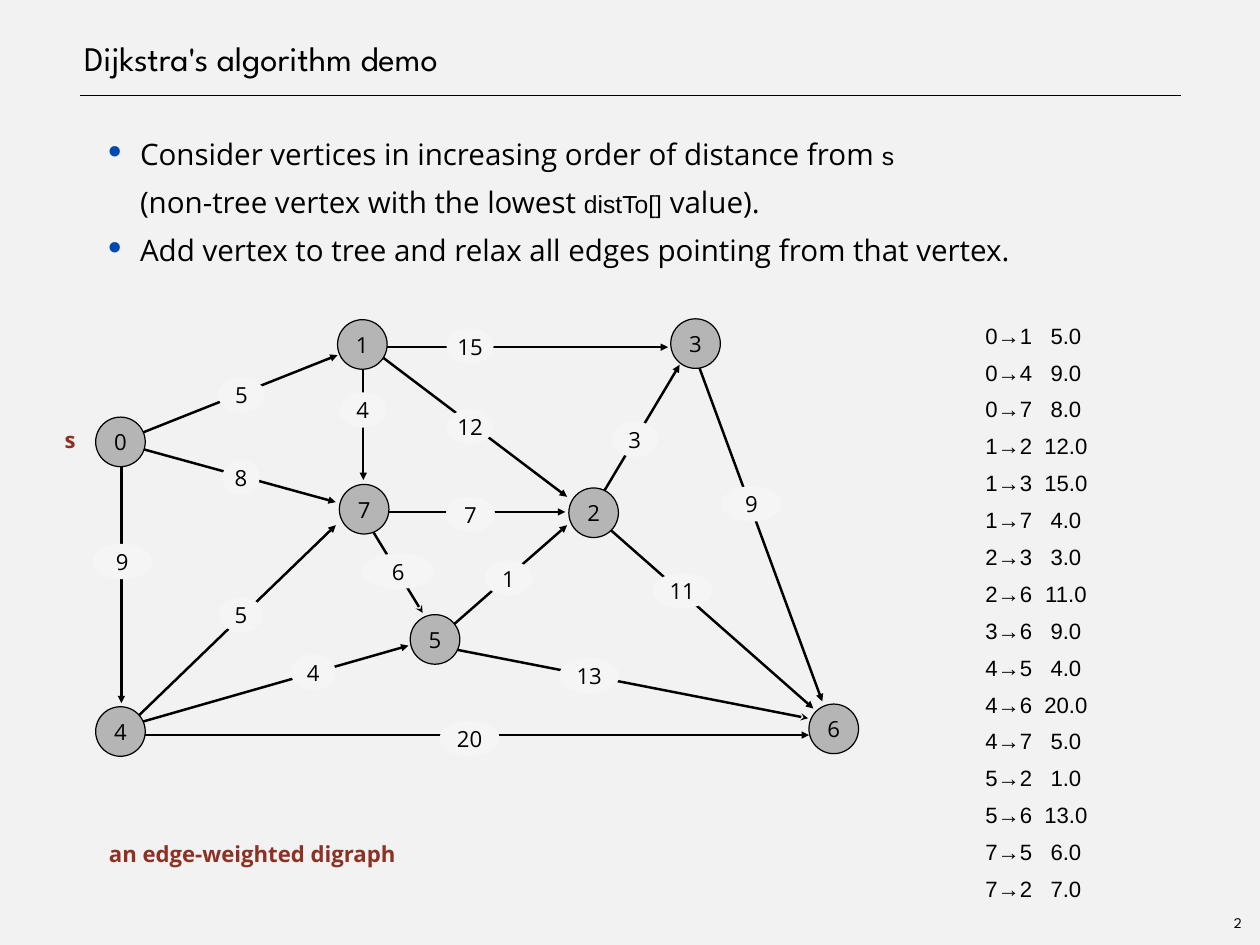
from typing import NamedTuple

from lxml.etree import SubElement
from pptx import Presentation
from pptx.dml.color import RGBColor
from pptx.enum.shapes import MSO_CONNECTOR, MSO_SHAPE
from pptx.enum.text import MSO_ANCHOR, MSO_AUTO_SIZE, PP_ALIGN
from pptx.oxml.ns import qn
from pptx.util import Inches, Pt

COLORS = {
    "page": "F2F2F2",
    "ink": "000000",
    "vertex": "B5B5B5",
    "weight": "F5F5F5",
    "accent": "8D3124",
    "bullet": "0048B4",
}
SANS, MONO, HEADING = "Open Sans", "Arial", "League Spartan"
VERTEX_SIZE = 0.56
WEIGHT_HEIGHT = 0.4


class Vertex(NamedTuple):
    name: str
    left: float
    top: float


class Edge(NamedTuple):
    source: int
    target: int
    weight: int
    start: tuple[float, float]
    end: tuple[float, float]
    label: tuple[float, float, float]  # left, top, width
    head: str = "triangle"


class Span(NamedTuple):
    text: str
    size: int = 24
    font: str = SANS


VERTICES = [
    Vertex("0", 1.08, 4.71),
    Vertex("1", 3.81, 3.61),
    Vertex("2", 6.42, 5.51),
    Vertex("3", 7.57, 3.6),
    Vertex("4", 1.08, 7.98),
    Vertex("5", 4.63, 6.94),
    Vertex("6", 9.13, 7.95),
    Vertex("7", 3.83, 5.47),
]

EDGES = [
    Edge(0, 1, 5, (1.42, 4.96), (3.81, 4.01), (2.46, 4.26, 0.53)),
    Edge(0, 4, 9, (1.37, 5.15), (1.37, 7.94), (1.04, 6.14, 0.68)),
    Edge(0, 7, 8, (1.39, 5.01), (3.79, 5.67), (2.51, 5.19, 0.42)),
    Edge(1, 2, 12, (4.18, 3.93), (6.4, 5.61), (5.04, 4.62, 0.53)),
    Edge(1, 3, 15, (4.08, 3.92), (7.54, 3.92), (5.04, 3.71, 0.53)),
    Edge(1, 7, 4, (4.1, 3.88), (4.1, 5.42), (3.83, 4.43, 0.53)),
    Edge(2, 3, 3, (6.63, 5.86), (7.67, 4.12), (6.9, 4.76, 0.53)),
    Edge(2, 6, 11, (6.83, 5.93), (9.18, 8), (7.36, 6.47, 0.68)),
    Edge(3, 6, 9, (7.83, 3.98), (9.28, 7.92), (8.14, 5.49, 0.68)),
    Edge(4, 5, 4, (1.36, 8.22), (4.61, 7.29), (3.28, 7.39, 0.51)),
    Edge(4, 6, 20, (1.36, 8.3), (9.13, 8.3), (4.96, 8.14, 0.68)),
    Edge(4, 7, 5, (1.41, 8.23), (3.79, 5.93), (2.47, 6.74, 0.5)),
    Edge(5, 2, 1, (4.94, 7.21), (6.4, 5.93), (5.47, 6.33, 0.54)),
    Edge(5, 6, 13, (5.02, 7.31), (9.12, 8.11), (6.31, 7.43, 0.68), "stealth"),
    Edge(7, 5, 6, (4.05, 5.74), (4.77, 6.92), (4.08, 6.25, 0.83), "stealth"),
    Edge(7, 2, 7, (4.06, 5.78), (6.38, 5.78), (5.03, 5.61, 0.56)),
]

STEPS = [
    [
        Span("Consider vertices in increasing order of distance from "),
        Span("s", 20, MONO),
        Span("\n"),
        Span("(non-tree vertex with the lowest "),
        Span("distTo[]", 20, MONO),
        Span(" value)."),
    ],
    [Span("Add vertex to tree and relax all edges pointing from that vertex.")],
]


def rgb(name: str) -> RGBColor:
    return RGBColor.from_string(COLORS[name])


def set_frame(frame, left=0.0, top=0.0, right=0.0, bottom=0.0, anchor=MSO_ANCHOR.TOP) -> None:
    frame.word_wrap = True
    frame.auto_size = MSO_AUTO_SIZE.NONE
    frame.vertical_anchor = anchor
    frame.margin_left, frame.margin_right = Inches(left), Inches(right)
    frame.margin_top, frame.margin_bottom = Inches(top), Inches(bottom)


def add_span(para, text, *, size=18, font=SANS, color="ink", bold=False) -> None:
    if text == "\n":
        para.add_line_break()
        return
    span = para.add_run()
    span.text = text
    span.font.size, span.font.name, span.font.bold = Pt(size), font, bold
    span.font.color.rgb = rgb(color)


def write(frame, lines, *, align=PP_ALIGN.LEFT, spacing=None, center_tab=None, **style) -> None:
    """Write one paragraph per line; center_tab is the inch position of a centred tab stop."""
    for index, line in enumerate(lines):
        para = frame.paragraphs[0] if index == 0 else frame.add_paragraph()
        if center_tab is not None:
            tabs = SubElement(para._p.get_or_add_pPr(), qn("a:tabLst"))
            SubElement(tabs, qn("a:tab"), pos=str(Inches(center_tab)), algn="ctr")
        para.alignment = align
        para.line_spacing = spacing
        add_span(para, line, **style)


def add_text(page, left, top, width, height, lines, *, inset=0.12, anchor=MSO_ANCHOR.TOP, **style) -> None:
    box = page.shapes.add_textbox(Inches(left), Inches(top), Inches(width), Inches(height))
    set_frame(box.text_frame, inset, 0.06, 0.06, 0.06, anchor)
    write(box.text_frame, lines, **style)


def add_line(page, start, end, width, head=None) -> None:
    line = page.shapes.add_connector(
        MSO_CONNECTOR.STRAIGHT, *(Inches(value) for value in (*start, *end))
    )
    line.line.color.rgb = rgb("ink")
    line.line.width = Pt(width)
    if head:
        SubElement(line.line._get_or_add_ln(), qn("a:tailEnd"), type=head)
    SubElement(line._element.spPr, qn("a:effectLst"))


def add_oval(page, text, left, top, width, height, fill, outlined=False) -> None:
    oval = page.shapes.add_shape(
        MSO_SHAPE.OVAL, Inches(left), Inches(top), Inches(width), Inches(height)
    )
    oval.shadow.inherit = False
    oval.fill.solid()
    oval.fill.fore_color.rgb = rgb(fill)
    if outlined:
        oval.line.color.rgb = rgb("ink")
        oval.line.width = Pt(1)
    else:
        oval.line.fill.background()
    set_frame(oval.text_frame, anchor=MSO_ANCHOR.MIDDLE)
    write(oval.text_frame, [text], align=PP_ALIGN.CENTER)


def place(holder, left, top, width, height) -> None:
    holder.left, holder.top = Inches(left), Inches(top)
    holder.width, holder.height = Inches(width), Inches(height)


def fill_title(title) -> None:
    place(title, 0.89, 0, 12.44, 0.89)
    set_frame(title.text_frame, left=0.06, anchor=MSO_ANCHOR.BOTTOM)
    write(title.text_frame, ["Dijkstra's algorithm demo"], size=28, font=HEADING)


def fill_steps(body) -> None:
    place(body, 0.89, 1.39, 12.44, 8.89)
    set_frame(body.text_frame)
    for index, spans in enumerate(STEPS):
        para = body.text_frame.paragraphs[0] if index == 0 else body.text_frame.add_paragraph()
        props = para._p.get_or_add_pPr()
        props.set("marL", str(Inches(0.69)))
        props.set("indent", str(Inches(-0.56)))
        tint = SubElement(props, qn("a:buClr"))
        SubElement(tint, qn("a:srgbClr"), val=COLORS["bullet"])
        SubElement(props, qn("a:buSzPct"), val="167000")
        SubElement(props, qn("a:buChar"), char="・")
        para.level = 1
        para.line_spacing = Pt(39)
        para.space_before = Pt(0)
        for span in spans:
            add_span(para, span.text, size=span.size, font=span.font)


def draw_graph(page) -> None:
    for edge in EDGES:
        add_line(page, edge.start, edge.end, 2, edge.head)
    for vertex in VERTICES:
        add_oval(page, *vertex, VERTEX_SIZE, VERTEX_SIZE, "vertex", outlined=True)
    for edge in EDGES:
        add_oval(page, str(edge.weight), *edge.label, WEIGHT_HEIGHT, "weight")


def main() -> None:
    deck = Presentation()
    deck.slide_width, deck.slide_height = Inches(14.22), Inches(10.67)
    page = deck.slides.add_slide(deck.slide_layouts[1])
    page.background.fill.solid()
    page.background.fill.fore_color.rgb = rgb("page")

    fill_title(page.shapes.title)
    fill_steps(page.placeholders[1])
    add_line(page, (0.9, 1.08), (13.33, 1.08), 1)
    draw_graph(page)
    add_text(page, 0.61, 4.75, 0.33, 0.4, ["s"], color="accent", bold=True)
    add_text(page, 1.11, 9.28, 3.64, 0.4, ["an edge-weighted digraph"],
             spacing=1.5, color="accent", bold=True)
    weights = [f"{edge.source}→{edge.target}\t{edge.weight:.1f}" for edge in EDGES]
    add_text(page, 11, 3.46, 1.64, 6.78, weights, spacing=Pt(30), center_tab=0.91, font=MONO)
    add_text(page, 13.8, 10.26, 0.34, 0.31, ["2"], inset=0.06, anchor=MSO_ANCHOR.MIDDLE,
             align=PP_ALIGN.CENTER, size=12, font=HEADING)
    deck.save("out.pptx")


if __name__ == "__main__":
    main()
